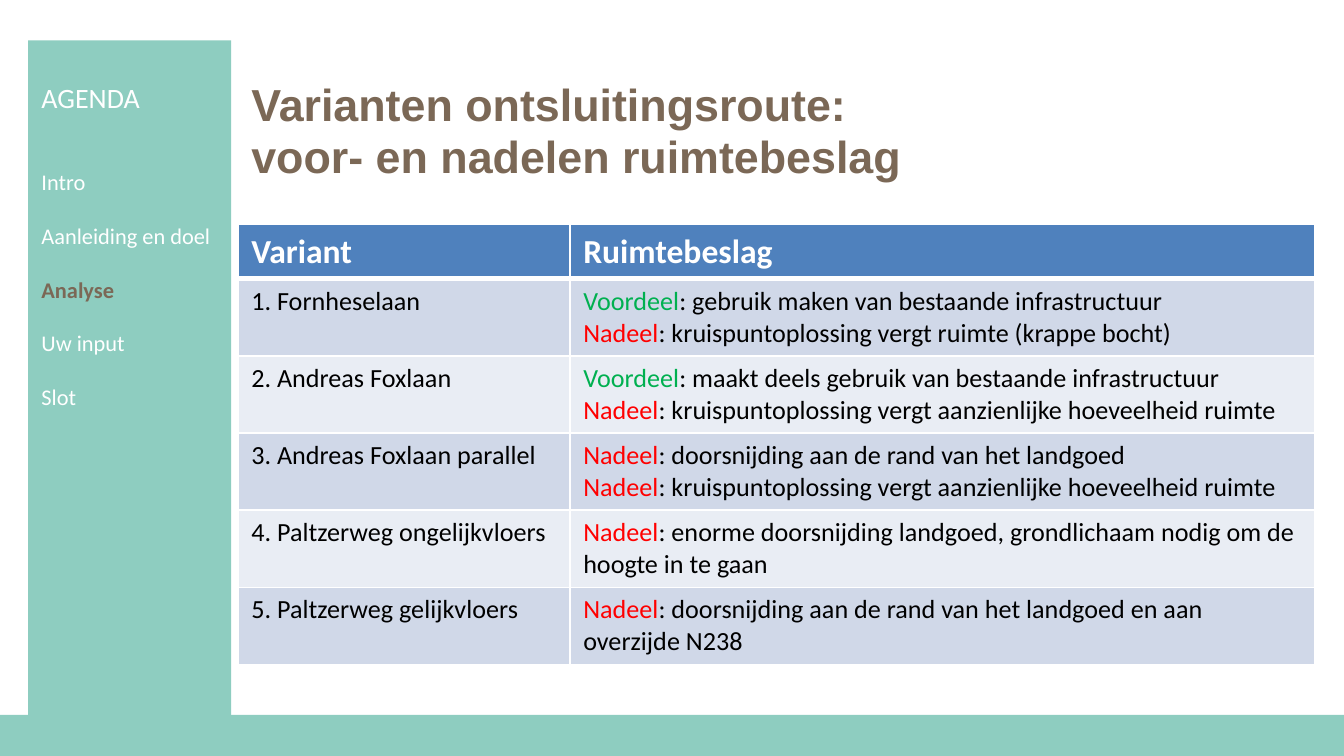
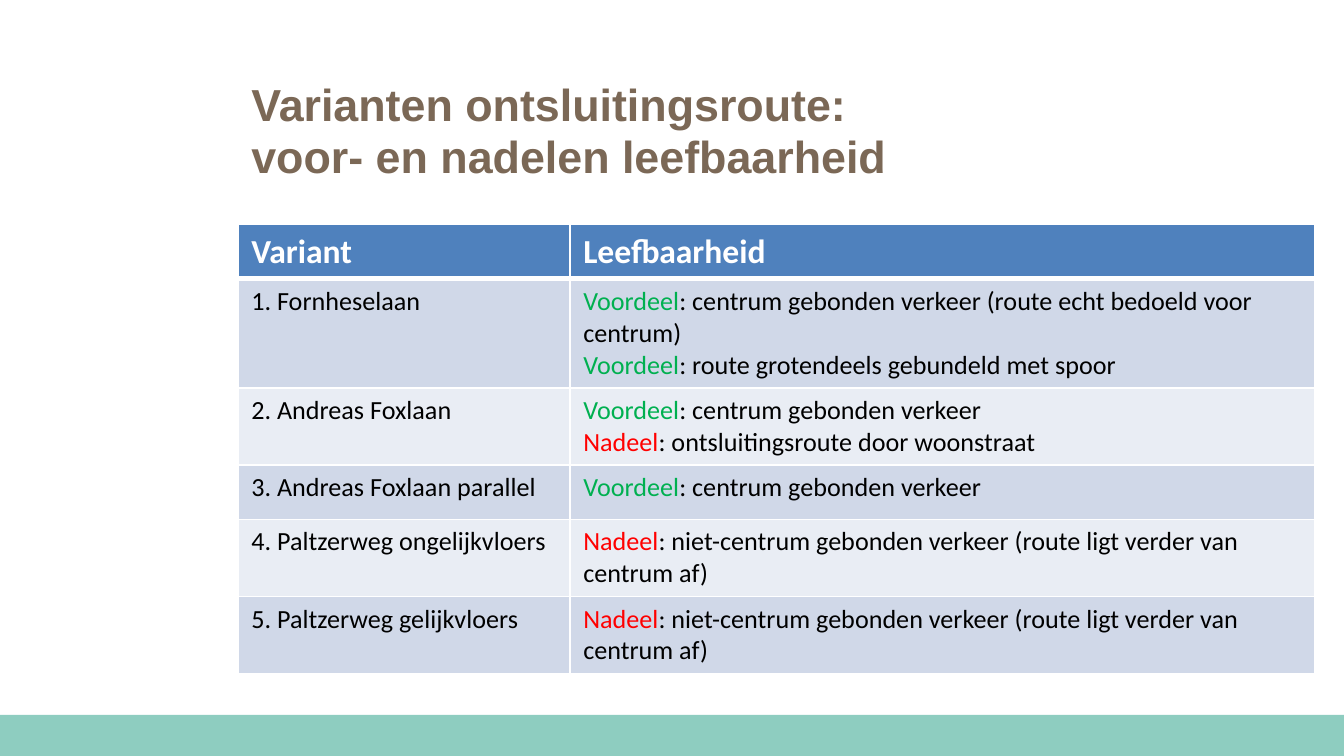
import lxml.etree
import pptx
import pptx.dml.color
import pptx.enum.shapes
import pptx.enum.text
import pptx.oxml.ns
import pptx.util

Inches = pptx.util.Inches
Pt = pptx.util.Pt
RGBColor = pptx.dml.color.RGBColor

MINT = RGBColor(0x8E, 0xCD, 0xC0)
BROWN = RGBColor(0x7B, 0x68, 0x56)
WHITE = RGBColor(0xFF, 0xFF, 0xFF)
BLACK = RGBColor(0, 0, 0)
HEADER_BLUE = RGBColor(0x4F, 0x81, 0xBD)
ROW_FILLS = (RGBColor(0xD0, 0xD8, 0xE8), RGBColor(0xE9, 0xED, 0xF4))
LABEL_COLORS = {"Voordeel": RGBColor(0, 0xB0, 0x50), "Nadeel": RGBColor(0xFF, 0, 0)}

SLIDE_WIDTH = 10
SLIDE_HEIGHT = SLIDE_WIDTH * 9 / 16
TITLE_FONT = "Arial"
BODY_FONT = "Calibri"
TITLE_BOX = (1.87, 0.58, 6.85, 1.09)
TABLE_BOX = (1.77, 1.67, 8.01, 2.43)
SIDEBAR_BOX = (0.21, 0.3, 1.51, 5.06)
BAND_BOX = (0, 5.32, SLIDE_WIDTH, 0.31)
VARIANT_WIDTH = 2.47

AGENDA = ["Intro", "Aanleiding en doel", "Analyse", "Uw input", "Slot"]
VARIANTS = ["1. Fornheselaan", "2. Andreas Foxlaan", "3. Andreas Foxlaan parallel",
            "4. Paltzerweg ongelijkvloers", "5. Paltzerweg gelijkvloers"]

SPACE_USE = [
    [("Voordeel", "gebruik maken van bestaande infrastructuur"),
     ("Nadeel", "kruispuntoplossing vergt ruimte (krappe bocht)")],
    [("Voordeel", "maakt deels gebruik van bestaande infrastructuur"),
     ("Nadeel", "kruispuntoplossing vergt aanzienlijke hoeveelheid ruimte")],
    [("Nadeel", "doorsnijding aan de rand van het landgoed"),
     ("Nadeel", "kruispuntoplossing vergt aanzienlijke hoeveelheid ruimte")],
    [("Nadeel", "enorme doorsnijding landgoed, grondlichaam nodig om de hoogte in te gaan")],
    [("Nadeel", "doorsnijding aan de rand van het landgoed en aan overzijde N238")],
]
OUTSIDE_CENTRE = ("Nadeel", "niet-centrum gebonden verkeer (route ligt verder van centrum af)")
LIVEABILITY = [
    [("Voordeel", "centrum gebonden verkeer (route echt bedoeld voor centrum)"),
     ("Voordeel", "route grotendeels gebundeld met spoor")],
    [("Voordeel", "centrum gebonden verkeer"),
     ("Nadeel", "ontsluitingsroute door woonstraat")],
    [("Voordeel", "centrum gebonden verkeer")],
    [OUTSIDE_CENTRE],
    [OUTSIDE_CENTRE],
]


def set_font(paragraph, name, size, color, bold=False):
    font = paragraph.font
    font.name, font.size, font.bold = name, Pt(size), bold
    font.color.rgb = color


def add_block(slide, box):
    """Add a plain mint rectangle."""
    shape = slide.shapes.add_shape(
        pptx.enum.shapes.MSO_SHAPE.RECTANGLE, *map(Inches, box))
    shape.shadow.inherit = False
    shape.fill.solid()
    shape.fill.fore_color.rgb = MINT
    shape.line.fill.background()
    return shape


def set_title(slide, box, topic):
    title = slide.shapes.title
    title.left, title.top, title.width, title.height = map(Inches, box)
    frame = title.text_frame
    frame.margin_left = frame.margin_right = frame.margin_top = frame.margin_bottom = 0
    frame.auto_size = pptx.enum.text.MSO_AUTO_SIZE.NONE
    frame.vertical_anchor = pptx.enum.text.MSO_ANCHOR.TOP
    frame.text = f"Varianten ontsluitingsroute: \vvoor- en nadelen {topic.lower()}"
    paragraph = frame.paragraphs[0]
    paragraph.alignment = pptx.enum.text.PP_ALIGN.LEFT
    paragraph.line_spacing = Pt(28)
    set_font(paragraph, TITLE_FONT, 24, BROWN, bold=True)


def add_sidebar(slide, box, current):
    """Add the agenda with the current item highlighted."""
    frame = add_block(slide, box).text_frame
    frame.word_wrap = True
    frame.vertical_anchor = pptx.enum.text.MSO_ANCHOR.TOP
    frame.margin_top = Inches(0.3)
    frame.text = "\n".join(["AGENDA"] + AGENDA)
    for index, paragraph in enumerate(frame.paragraphs):
        paragraph.alignment = pptx.enum.text.PP_ALIGN.LEFT
        highlighted = paragraph.text == current
        set_font(paragraph, BODY_FONT, 12 if index else 15,
                 BROWN if highlighted else WHITE, highlighted)
        if index:
            paragraph.space_before = Pt(29 if index == 1 else 14.4)


def fill_cell(cell, color):
    cell.fill.solid()
    cell.fill.fore_color.rgb = color


def add_cell_borders(cell, widths):
    """Draw white borders; widths maps a side letter (L, R, T, B) to points."""
    properties = cell._tc.get_or_add_tcPr()
    qualified = pptx.oxml.ns.qn
    for position, (side, width) in enumerate(widths.items()):
        line = lxml.etree.Element(qualified(f"a:ln{side}"), w=str(Pt(width)))
        fill = lxml.etree.SubElement(line, qualified("a:solidFill"))
        lxml.etree.SubElement(fill, qualified("a:srgbClr"), val=str(WHITE))
        properties.insert(position, line)


def write_arguments(frame, arguments):
    """Write one paragraph per argument, with its label coloured."""
    for index, (label, text) in enumerate(arguments):
        paragraph = frame.add_paragraph() if index else frame.paragraphs[0]
        set_font(paragraph, BODY_FONT, 14, BLACK)
        label_run = paragraph.add_run()
        label_run.text = label
        label_run.font.color.rgb = LABEL_COLORS[label]
        paragraph.add_run().text = f": {text}"


def add_variant_table(slide, box, topic, argument_rows):
    table = slide.shapes.add_table(
        len(VARIANTS) + 1, 2, *map(Inches, box)).table
    table.columns[0].width = Inches(VARIANT_WIDTH)
    table.columns[1].width = Inches(box[2] - VARIANT_WIDTH)
    for column, heading in enumerate(("Variant", topic)):
        cell = table.cell(0, column)
        cell.text = heading
        set_font(cell.text_frame.paragraphs[0], BODY_FONT, 18, WHITE, bold=True)
        fill_cell(cell, HEADER_BLUE)
        add_cell_borders(cell, {"L": 1, "R": 1, "T": 1, "B": 3})
    for row, (variant, arguments) in enumerate(zip(VARIANTS, argument_rows), 1):
        name_cell, argument_cell = table.cell(row, 0), table.cell(row, 1)
        name_cell.text = variant
        set_font(name_cell.text_frame.paragraphs[0], BODY_FONT, 14, BLACK)
        write_arguments(argument_cell.text_frame, arguments)
        for cell in (name_cell, argument_cell):
            fill_cell(cell, ROW_FILLS[(row - 1) % 2])


def add_variant_slide(presentation, topic, argument_rows):
    slide = presentation.slides.add_slide(presentation.slide_layouts[5])
    add_block(slide, BAND_BOX)
    set_title(slide, TITLE_BOX, topic)
    add_variant_table(slide, TABLE_BOX, topic, argument_rows)
    return slide


def main():
    presentation = pptx.Presentation()
    presentation.slide_width = Inches(SLIDE_WIDTH)
    presentation.slide_height = Inches(SLIDE_HEIGHT)
    slide = add_variant_slide(presentation, "Ruimtebeslag", SPACE_USE)
    add_sidebar(slide, SIDEBAR_BOX, "Analyse")
    add_variant_slide(presentation, "Leefbaarheid", LIVEABILITY)
    presentation.save("out.pptx")


if __name__ == "__main__":
    main()
